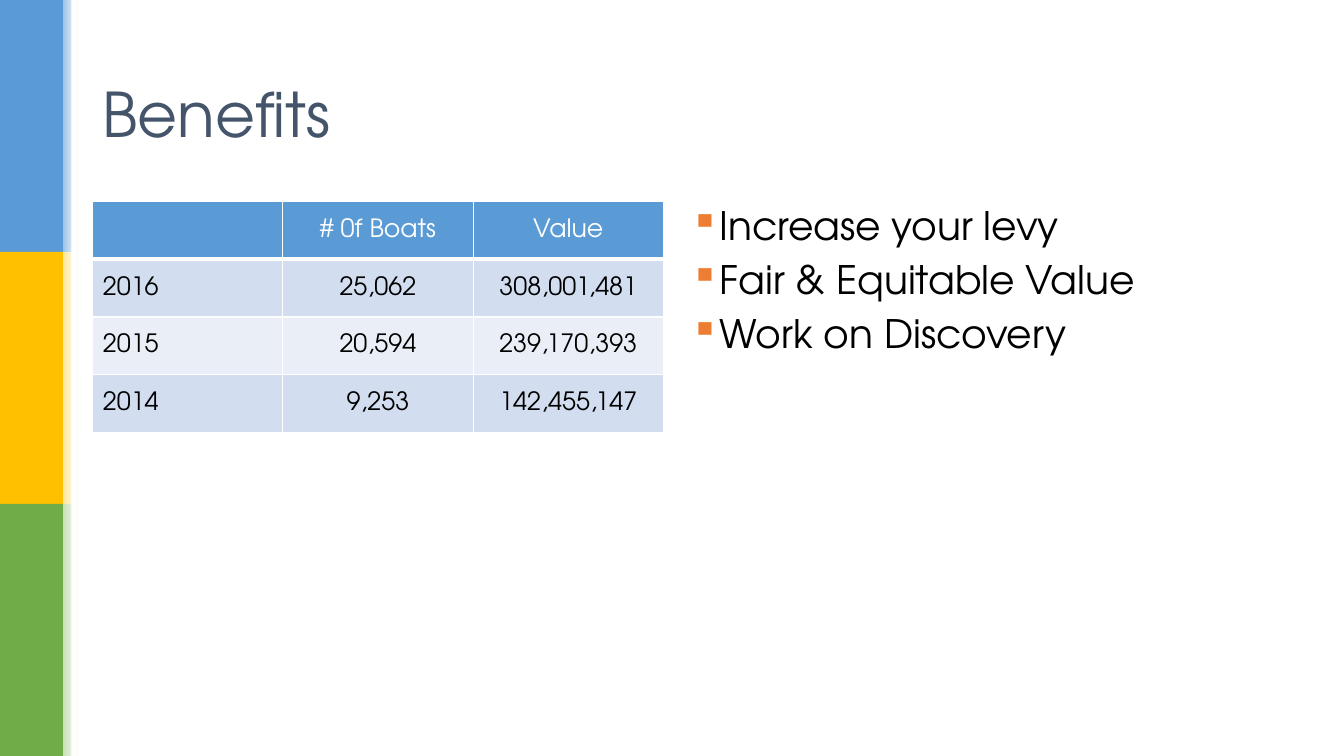
from dataclasses import dataclass
from pptx import Presentation
from pptx.dml.color import RGBColor as Color
from pptx.enum.shapes import MSO_SHAPE as Shape
from pptx.enum.text import MSO_ANCHOR as Anchor, PP_ALIGN as Align
from pptx.oxml import parse_xml
from pptx.oxml.ns import nsdecls
from pptx.util import Emu, Pt

SCALE = 9525


@dataclass(frozen=True)
class Theme:
    font: str = "TeX Gyre Adventor"
    title_size: int = 44
    body_size: int = 28
    table_size: int = 18
    title: str = "44546A"
    ink: str = "000000"
    white: str = "FFFFFF"
    bullet: str = "ED7D31"
    header: str = "5B9BD5"
    bands: tuple = ("D2DEEF", "EAEFF7")
    stripes: tuple = (("5B9BD5", "9DC3E6"), ("FFC000", "FFE699"), ("70AD47", "C5E0B4"))


def px(*lengths):
    return [Emu(length * SCALE) for length in lengths]


class SlideBuilder:
    def __init__(self, page, theme):
        self.page = page
        self.theme = theme

    def block(self, left, top, width, height, color, fade=None):
        shape = self.page.shapes.add_shape(Shape.RECTANGLE, *px(left, top, width, height))
        shape.shadow.inherit = False
        shape.line.fill.background()
        if fade is None:
            shape.fill.solid()
            shape.fill.fore_color.rgb = Color.from_string(color)
        else:
            shape.fill.gradient()
            shape.fill.gradient_angle = 0
            for stop, tone in zip(shape.fill.gradient_stops, (color, fade)):
                stop.color.rgb = Color.from_string(tone)

    def span(self, para, text, size, color):
        span = para.add_run()
        span.text = text
        span.font.name = self.theme.font
        span.font.size = Pt(size)
        span.font.bold = False
        span.font.color.rgb = Color.from_string(color)

    def text_frame(self, left, top, width, height, anchor):
        box = self.page.shapes.add_textbox(*px(left, top, width, height))
        frame = box.text_frame
        frame.word_wrap = True
        frame.vertical_anchor = anchor
        return frame

    def title(self, left, top, width, height, text):
        frame = self.text_frame(left, top, width, height, Anchor.MIDDLE)
        self.span(frame.paragraphs[0], text, self.theme.title_size, self.theme.title)

    def bullets(self, left, top, width, height, items):
        frame = self.text_frame(left, top, width, height, Anchor.TOP)
        indent = px(24)[0]
        for index, item in enumerate(items):
            para = frame.add_paragraph() if index else frame.paragraphs[0]
            para.line_spacing = 0.9
            if index:
                para.space_before = Pt(8.4)
            properties = para._p.get_or_add_pPr()
            properties.set("marL", str(indent))
            properties.set("indent", str(-indent))
            properties.append(parse_xml(
                f'<a:buClr {nsdecls("a")}><a:srgbClr val="{self.theme.bullet}"/></a:buClr>'))
            properties.append(parse_xml(f'<a:buChar {nsdecls("a")} char="▪"/>'))
            self.span(para, item, self.theme.body_size, self.theme.ink)

    def borders(self, cell, bottom):
        properties = cell._tc.get_or_add_tcPr()
        for index, (side, points) in enumerate(zip("LRTB", (1, 1, 1, bottom))):
            properties.insert(index, parse_xml(
                f'<a:ln{side} {nsdecls("a")} w="{Pt(points)}"><a:solidFill>'
                f'<a:srgbClr val="{self.theme.white}"/></a:solidFill></a:ln{side}>'))

    def table(self, left, top, width, row_height, rows):
        theme = self.theme
        frame = self.page.shapes.add_table(
            len(rows), len(rows[0]), *px(left, top, width, row_height * len(rows)))
        for row_index, values in enumerate(rows):
            header = row_index == 0
            fill = theme.header if header else theme.bands[(row_index - 1) % 2]
            for column_index, value in enumerate(values):
                cell = frame.table.cell(row_index, column_index)
                cell.fill.solid()
                cell.fill.fore_color.rgb = Color.from_string(fill)
                self.borders(cell, 3 if header else 1)
                cell.vertical_anchor = Anchor.MIDDLE
                cell.margin_left, cell.margin_right = px(10, 10)
                cell.margin_top, cell.margin_bottom = px(5, 5)
                para = cell.text_frame.paragraphs[0]
                para.alignment = Align.CENTER if column_index else Align.LEFT
                if value:
                    self.span(para, value, theme.table_size, theme.white if header else theme.ink)


def main():
    deck = Presentation()
    deck.slide_width, deck.slide_height = px(1280, 720)
    theme = Theme()
    builder = SlideBuilder(deck.slides.add_slide(deck.slide_layouts[6]), theme)
    for index, (color, tint) in enumerate(theme.stripes):
        builder.block(0, 240 * index, 60, 240, color)
        builder.block(60, 240 * index, 15, 240, tint, theme.white)
    builder.block(68, 0, 5, 720, theme.white)
    builder.bullets(648, 192, 544, 457, (
        "Increase your levy", "Fair & Equitable Value", "Work on Discovery"))
    builder.table(88, 192, 544, 55, (
        ("", "# 0f Boats", "Value"),
        ("2016", "25,062", "308,001,481"),
        ("2015", "20,594", "239,170,393"),
        ("2014", "9,253", "142,455,147")))
    builder.title(88, 38, 1104, 139, "Benefits")
    deck.save("out.pptx")


if __name__ == "__main__":
    main()
